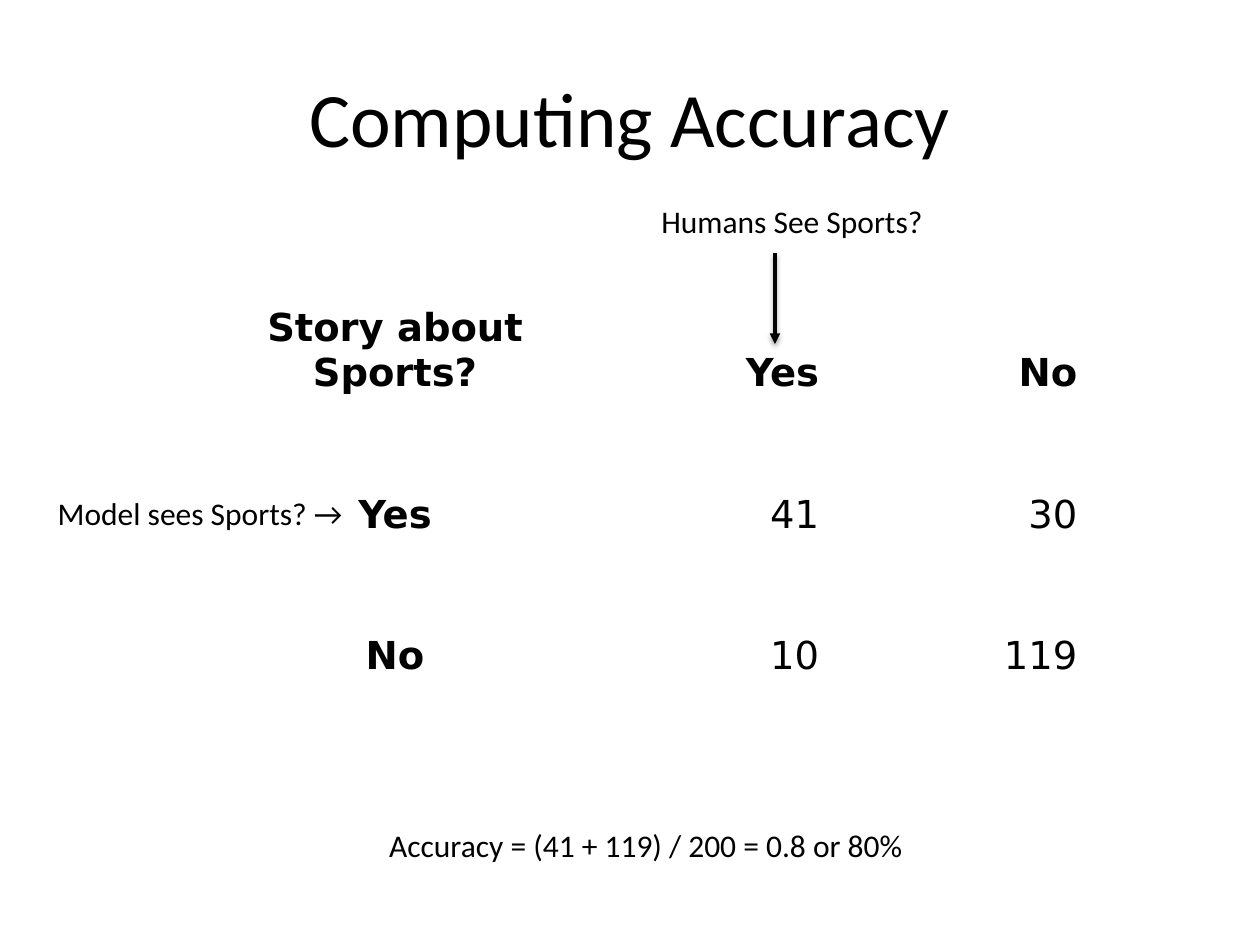
"""Build the slide that computes a classifier's accuracy from its confusion matrix."""
from lxml import etree
from pptx import Presentation
from pptx.dml.color import RGBColor
from pptx.enum import shapes, text
from pptx.oxml import ns
from pptx.util import Inches, Pt

BLACK = "000000"


def color(hex_code):
    return RGBColor.from_string(hex_code)


def write(frame, words, size=18, font="Calibri", bold=False, align=text.PP_ALIGN.LEFT):
    paragraph = frame.paragraphs[0]
    paragraph.alignment = align
    run = paragraph.add_run()
    run.text = words
    run.font.size = Pt(size)
    run.font.name = font
    run.font.bold = bold
    run.font.color.rgb = color(BLACK)


deck = Presentation()
deck.slide_width, deck.slide_height = Inches(10), Inches(7.5)
slide = deck.slides.add_slide(deck.slide_layouts[5])

title = slide.shapes.title
title.left, title.top = Inches(0.5), Inches(0.3)
title.width, title.height = Inches(9), Inches(1.25)
title.text_frame.vertical_anchor = text.MSO_ANCHOR.MIDDLE
write(title.text_frame, "Computing Accuracy", size=44, align=text.PP_ALIGN.CENTER)

counts = [
    ["Story about Sports?", "Yes", "No"],
    ["Yes", "41", "30"],
    ["No", "10", "119"],
]
matrix = slide.shapes.add_table(
    3, 3, Inches(1.71), Inches(2.01), Inches(6.85), Inches(3.38)
).table
matrix.first_row = matrix.horz_banding = False
for column, width in zip(matrix.columns, [2.85, 1.95, 2.05]):
    column.width = Inches(width)
for r, row in enumerate(counts):
    matrix.rows[r].height = Inches(3.38 / 3)
    for c, words in enumerate(row):
        cell = matrix.cell(r, c)
        cell.fill.background()
        cell.vertical_anchor = text.MSO_ANCHOR.BOTTOM
        cell.margin_left = cell.margin_right = cell.margin_top = Inches(0.01)
        cell.margin_bottom = 0
        align = text.PP_ALIGN.RIGHT if c else text.PP_ALIGN.CENTER
        write(cell.text_frame, words, size=22, font="DejaVu Sans",
              bold=r == 0 or c == 0, align=align)

labels = [
    ("Model sees Sports? →", 0.36, 3.87, 2.5, 0.4, False),
    ("Humans See Sports?", 5.15, 1.55, 2.47, 0.71, True),
    ("Accuracy = (41 + 119) / 200 = 0.8 or 80%", 2.99, 6.51, 4.33, 0.4, False),
]
for words, left, top, width, height, wrap in labels:
    label = slide.shapes.add_textbox(*map(Inches, (left, top, width, height)))
    label.text_frame.word_wrap = wrap
    write(label.text_frame, words)

arrow = slide.shapes.add_connector(
    shapes.MSO_CONNECTOR.STRAIGHT, Inches(6.15), Inches(2.01), Inches(6.15), Inches(2.73)
)
arrow.line.color.rgb = color(BLACK)
arrow.line.width = Pt(2)
etree.SubElement(arrow.line._get_or_add_ln(), ns.qn("a:tailEnd"), type="triangle")
effects = etree.SubElement(arrow._element.spPr, ns.qn("a:effectLst"))
shadow = etree.SubElement(
    effects, ns.qn("a:outerShdw"), blurRad=str(Pt(3.1)), dist=str(Pt(1.6)),
    dir="5400000", rotWithShape="0",
)
shade = etree.SubElement(shadow, ns.qn("a:srgbClr"), val=BLACK)
etree.SubElement(shade, ns.qn("a:alpha"), val="38000")

deck.save("out.pptx")
